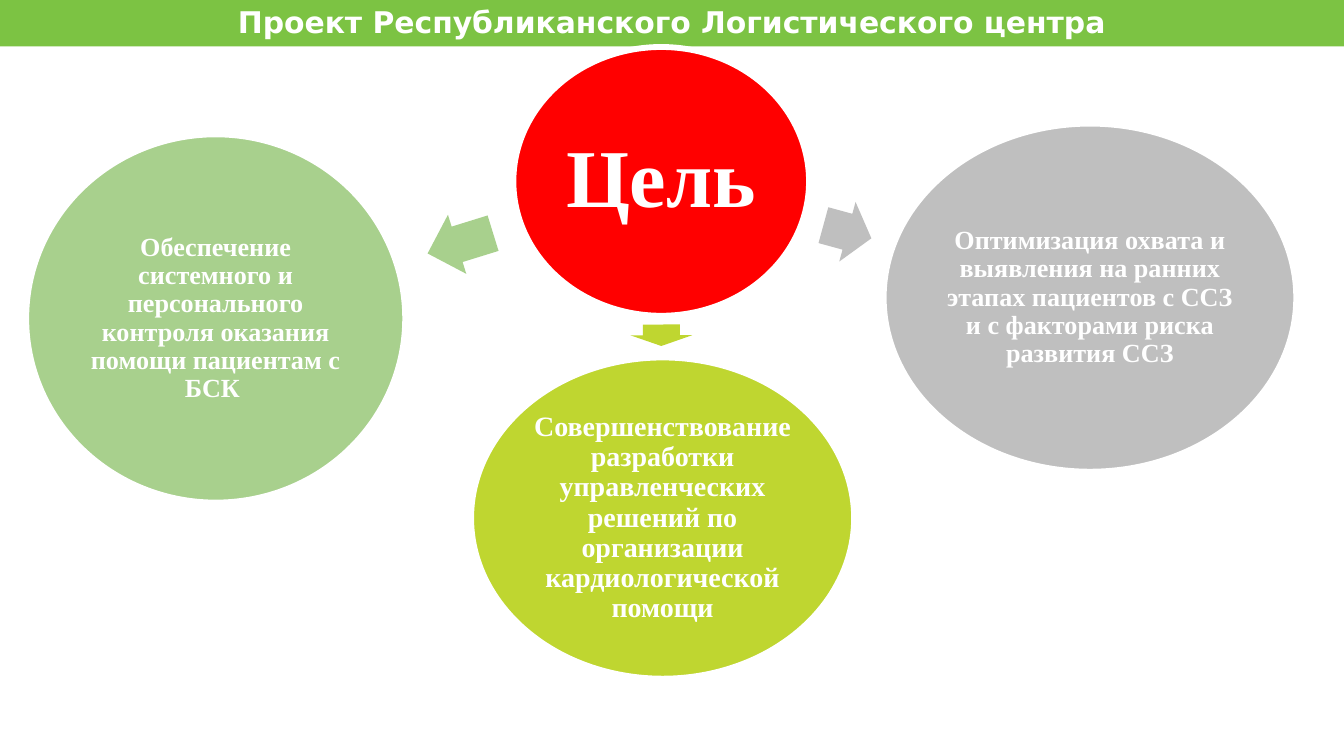
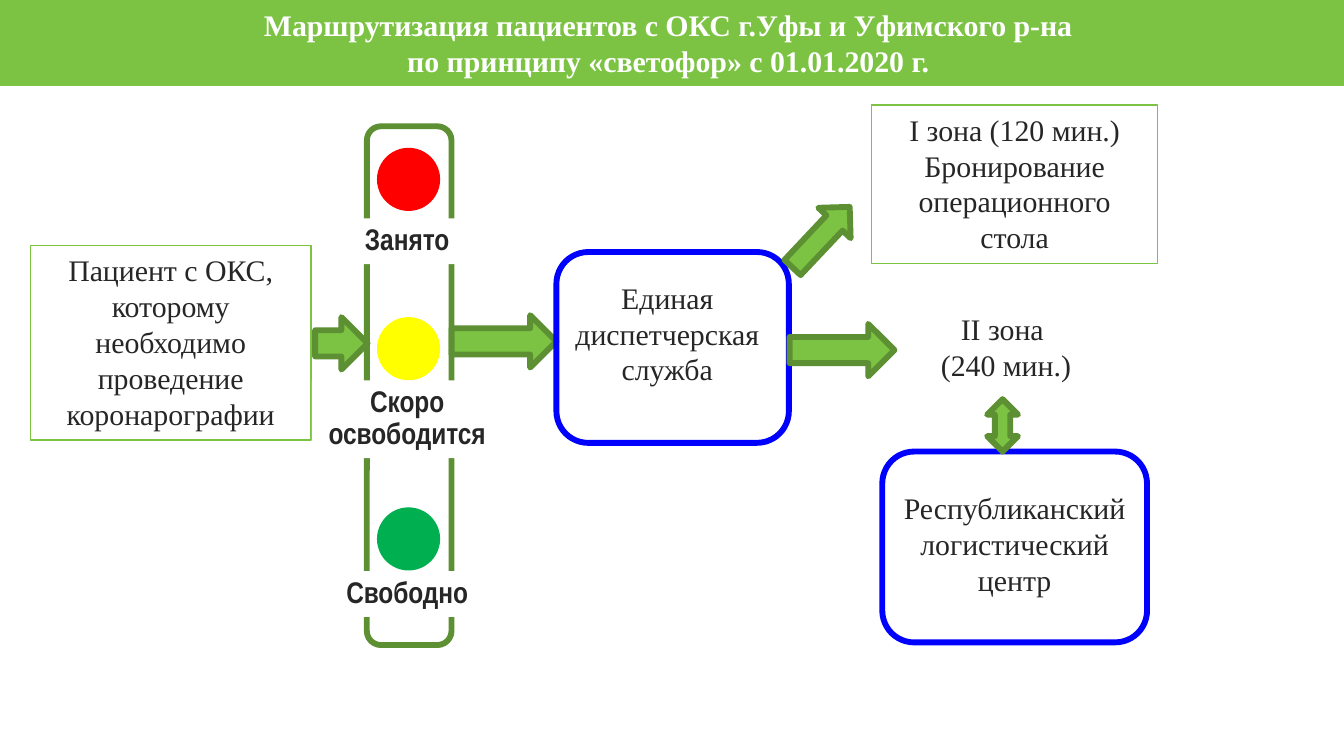
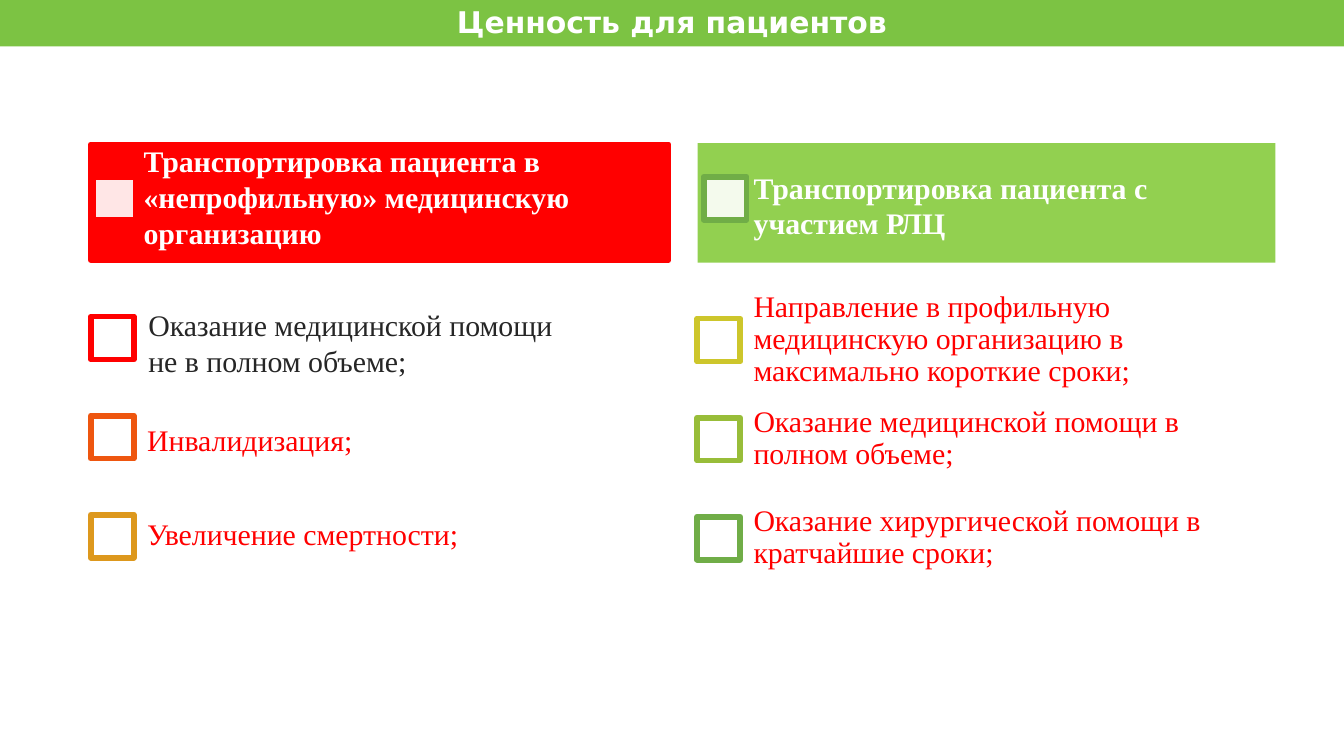
from lxml import etree
from pptx import Presentation
from pptx import util as u
from pptx.dml.color import RGBColor
from pptx.enum import shapes, text
from pptx.oxml.ns import qn

CELL = u.Inches(0.1)
COLUMNS, ROWS = 100, 56.25
OUTLINE = 3.15
BODY_SIZE = 16
SERIF, SANS, NARROW = "Times New Roman", "DejaVu Sans", "Arial Narrow"
COLOURS = {
    "white": "FFFFFF", "ink": "262626", "band": "7CC343", "edge": "5C9032",
    "red": "FF0000", "yellow": "FFFF00", "green": "00B050", "blue": "0000FF",
    "lime": "BFD630", "grey": "BFBFBF", "sage": "A8D08D", "orange": "EE560F",
    "amber": "DD981D", "fresh": "92D050", "leaf": "70AD47",
    "mustard": "CDC62B", "olive": "98BD39",
}
KIND = shapes.MSO_SHAPE
ALIGN = text.PP_ALIGN
TOP, MIDDLE = text.MSO_ANCHOR.TOP, text.MSO_ANCHOR.MIDDLE


def colour(name):
    return RGBColor.from_string(COLOURS[name])


def cells(*counts):
    return [round(count * CELL) for count in counts]


def write(box, words, size=BODY_SIZE, font=SERIF, ink="ink", bold=False,
          align=ALIGN.CENTER, anchor=TOP, spacing=None, inset=None, wrap=True):
    frame = box.text_frame
    frame.text = words
    frame.word_wrap = wrap
    frame.auto_size = text.MSO_AUTO_SIZE.NONE
    frame.vertical_anchor = anchor
    if inset is not None:
        frame.margin_left = frame.margin_right = u.Inches(inset)
        frame.margin_top = frame.margin_bottom = u.Inches(inset)
    for para in frame.paragraphs:
        para.alignment = align
        if spacing:
            para.line_spacing = spacing
        for span in para.runs:
            span.font.size = u.Pt(size)
            span.font.name = font
            span.font.bold = bold
            span.font.color.rgb = colour(ink)


def add_figure(page, kind, place, fill=None, line=None, width=OUTLINE,
               turn=0, opacity=None):
    figure = page.shapes.add_shape(kind, *cells(*place))
    figure.shadow.inherit = False
    figure.rotation = turn
    if fill:
        figure.fill.solid()
        figure.fill.fore_color.rgb = colour(fill)
    else:
        figure.fill.background()
    if opacity:
        tint = figure.fill._xPr.find(qn("a:solidFill"))[0]
        etree.SubElement(tint, qn("a:alpha")).set("val", str(opacity * 1000))
    if line:
        figure.line.color.rgb = colour(line)
        figure.line.width = u.Pt(width)
    else:
        figure.line.fill.background()
    return figure


def add_words(page, place, words, **style):
    box = page.shapes.add_textbox(*cells(*place))
    write(box, words, **style)


def add_page(deck, title, place=(-0.2, -0.2, 100.4, 3.65), font=SANS, anchor=MIDDLE):
    page = deck.slides.add_slide(deck.slide_layouts[5])
    band = page.shapes.title
    band.left, band.top, band.width, band.height = cells(*place)
    band.fill.solid()
    band.fill.fore_color.rgb = colour("band")
    write(band, title, font=font, ink="white", bold=True, anchor=anchor)
    return page


def add_bubble(page, place, words, fill, size, inset=0.02):
    bubble = add_figure(page, KIND.OVAL, place, fill, "white")
    write(bubble, words, size, ink="white", bold=True, anchor=MIDDLE,
          spacing=0.9, inset=inset)


def add_bubble_arrow(page, place, fill, turn):
    arrow = add_figure(page, KIND.RIGHT_ARROW, place, fill, turn=turn)
    arrow.adjustments[0], arrow.adjustments[1] = 0.6, 0.5


def add_route_arrow(page, place, kind=KIND.RIGHT_ARROW, turn=0):
    add_figure(page, kind, place, "band", "edge", turn=turn)


def add_framed_note(page, place, words):
    note = add_figure(page, KIND.RECTANGLE, place, line="band", width=0.75)
    write(note, words)


def add_centre(page, frame_place, words_place, words):
    add_words(page, words_place, words)
    add_figure(page, KIND.ROUNDED_RECTANGLE, frame_place, line="blue")


def add_traffic_light(page):
    for top, lamp in ((11, "red"), (23.6, "yellow"), (37.75, "green")):
        add_figure(page, KIND.OVAL, (28.05, top, 4.7, 4.7), lamp)
    add_figure(page, KIND.ROUNDED_RECTANGLE, (27.3, 9.4, 6.3, 38.6), line="edge")
    labels = (((25.6, 16.25, 9.4, 3.4), "Занято"),
              ((23.2, 28.3, 14.2, 5.8), "Скоро\nосвободится"),
              ((24.4, 42.5, 11.8, 3.4), "Свободно"))
    for place, words in labels:
        label = add_figure(page, KIND.RECTANGLE, place, "white")
        write(label, words, font=NARROW, bold=True, spacing=u.Pt(17))


def add_checkbox(page, left, top, line, opacity=None):
    add_figure(page, KIND.RECTANGLE, (left, top, 3.2, 3.2), "white", line,
               opacity=opacity)


def add_checklist(page, left, top, items):
    for index, (words, line, drop) in enumerate(items):
        row = top + 7.37 * index
        add_checkbox(page, left, row, line)
        if words:
            add_words(page, (left + 3, row - 2.1 + drop, 40, 7.4), words, ink="red",
                      align=ALIGN.LEFT, anchor=MIDDLE, spacing=0.9, inset=0.12)


def add_heading(page, place, words_place, words, fill, line, box_left, box_line):
    add_figure(page, KIND.RECTANGLE, place, fill, line)
    add_checkbox(page, box_left, 13.15, box_line, opacity=90)
    add_words(page, words_place, words, ink="white", bold=True, align=ALIGN.LEFT)


def build_goal(deck):
    page = add_page(deck, "Проект Республиканского Логистического центра")
    add_bubble(page, (38.2, 3.5, 22, 20), "Цель", "red", 44, inset=0.06)
    branches = (
        ((48.4, 22.65, 1.6, 4.6), 89.9, (35.05, 26.6, 28.5, 23.9), "lime", 15,
         "Совершенствование разработки управленческих решений по организации "
         "кардиологической помощи"),
        ((61.2, 14.95, 3.7, 4.6), 15.3, (65.75, 9.2, 30.7, 25.9), "grey", 14,
         "Оптимизация охвата и выявления на ранних этапах пациентов с ССЗ "
         "и с факторами риска развития ССЗ"),
        ((31.7, 15.8, 5.1, 4.6), 162.8, (1.95, 10, 28.2, 27.4), "sage", 14,
         "Обеспечение системного и персонального контроля оказания помощи "
         "пациентам с БСК "),
    )
    for arrow_place, turn, place, fill, size, words in branches:
        add_bubble_arrow(page, arrow_place, fill, turn)
        add_bubble(page, place, words, fill, size)


def build_routing(deck):
    page = add_page(deck, "Маршрутизация пациентов с ОКС г.Уфы и Уфимского р-на \v"
                    "по принципу «светофор» с 01.01.2020 г. ",
                    (0, 0, COLUMNS, 6.4), SERIF, TOP)
    add_framed_note(page, (2.25, 18.25, 20.9, 14.5),
                    "Пациент с ОКС, которому необходимо проведение коронарографии")
    add_route_arrow(page, (23.45, 23.6, 3.9, 3.9))
    add_traffic_light(page)
    add_route_arrow(page, (33.6, 23.45, 7.8, 3.9))
    add_framed_note(page, (64.85, 7.8, 21.3, 11.8),
                    "I зона (120 мин.) Бронирование операционного стола")
    add_centre(page, (41.4, 18.75, 17.3, 14.2), (40.6, 20.3, 18.1, 9.1),
               "Единая диспетчерская служба")
    add_words(page, (65.6, 22.65, 18.5, 6.4), "II зона \n(240 мин.)")
    add_centre(page, (65.65, 33.6, 19.7, 14.2), (64.85, 35.95, 21.3, 9.1),
               "Республиканский логистический центр")
    add_route_arrow(page, (58, 16, 6.2, 3.3), turn=313.3)
    add_route_arrow(page, (73.45, 29.7, 2.3, 3.9), KIND.UP_DOWN_ARROW)
    add_route_arrow(page, (58.75, 24.1, 7.8, 3.9))


def build_value(deck):
    page = add_page(deck, "Ценность для пациентов")
    add_heading(page, (6.75, 10.75, 43, 8.6), (9.7, 10.15, 40.3, 9.1),
                "Транспортировка пациента в «непрофильную» медицинскую организацию",
                "red", "red", 6.95, "red")
    add_checklist(page, 6.75, 23.55, (
        (None, "red", 0),
        ("Инвалидизация;", "orange", 0.37),
        ("Увеличение смертности;", "amber", 0)))
    add_words(page, (10.05, 22.35, 33.1, 6.4),
              "Оказание медицинской помощи\nне в полном объеме;",
              align=ALIGN.LEFT, wrap=False)
    add_heading(page, (51.9, 10.65, 43, 8.9), (55.1, 12.1, 39.3, 6.4),
                "Транспортировка пациента с участием РЛЦ",
                "fresh", None, 52.35, "leaf")
    add_checklist(page, 51.87, 23.7, (
        ("Направление в профильную медицинскую организацию в максимально "
         "короткие сроки;", "mustard", 0),
        ("Оказание медицинской помощи в полном объеме;", "olive", 0),
        ("Оказание хирургической помощи в кратчайшие сроки;", "leaf", 0)))


def main():
    deck = Presentation()
    deck.slide_width, deck.slide_height = cells(COLUMNS, ROWS)
    build_goal(deck)
    build_routing(deck)
    build_value(deck)
    deck.save("out.pptx")


if __name__ == "__main__":
    main()
